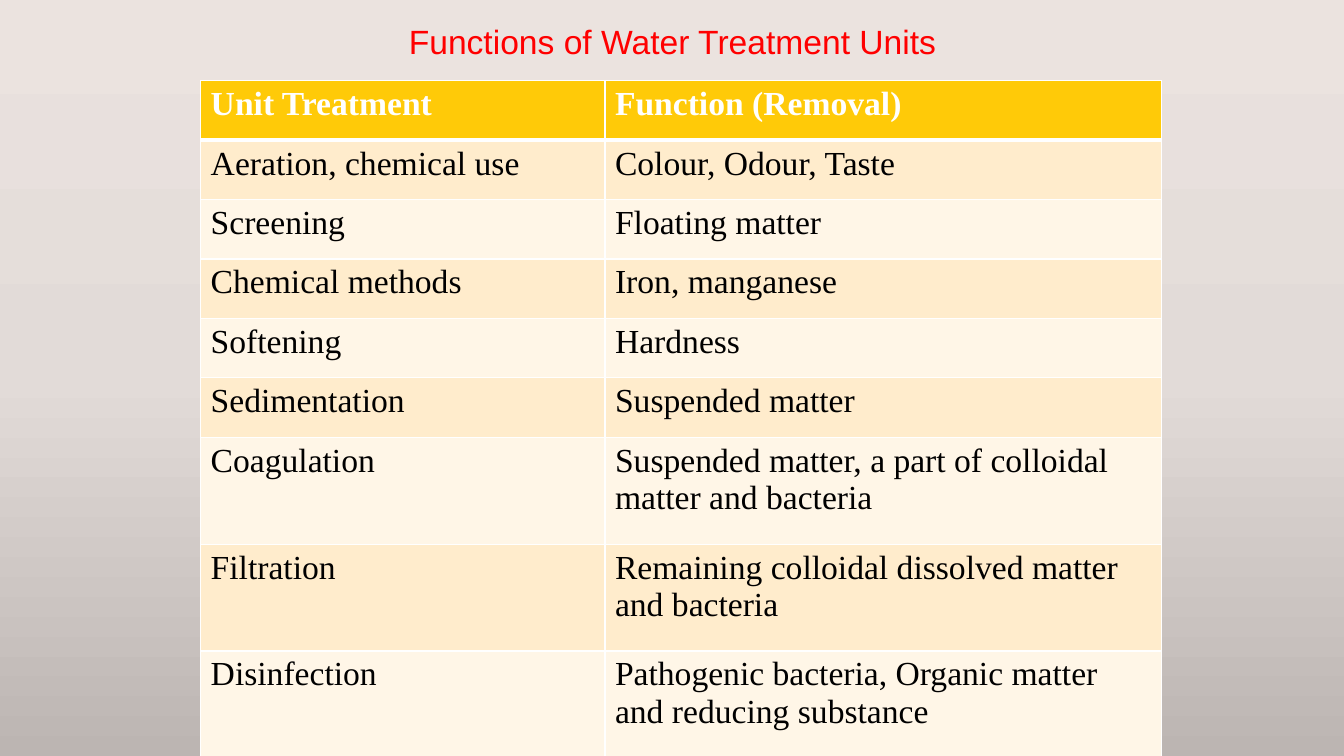
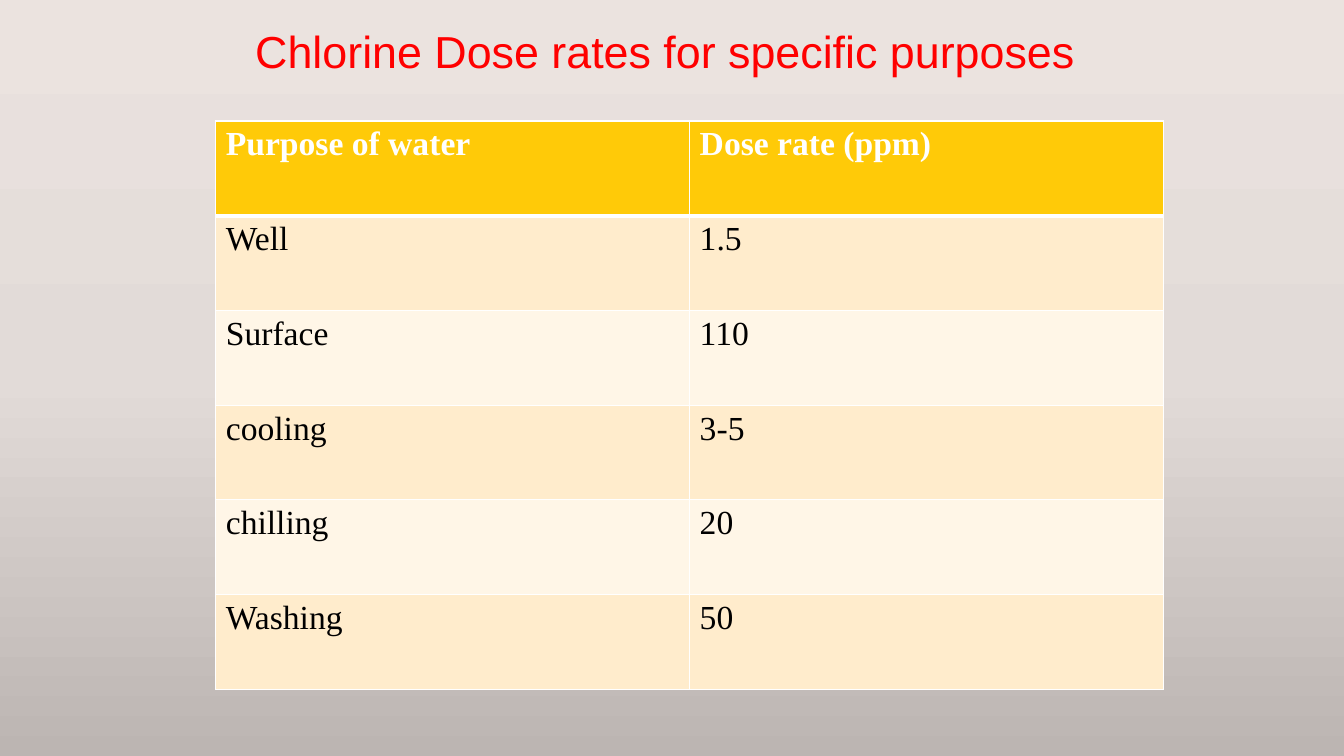
import copy
import dataclasses

import pptx
import pptx.dml.color
import pptx.enum.text
import pptx.oxml
import pptx.oxml.ns
import pptx.util

Inches = pptx.util.Inches


@dataclasses.dataclass(frozen=True)
class Theme:
    back: tuple = ("EBE3DF", "E2DBD8", "BCB5B2")
    title: str = "FF0000"
    head: str = "FFCA08"
    bands: tuple = ("FFECCC", "FFF6E7")
    light: str = "FFFFFF"
    dark: str = "000000"
    sans: str = "Arial"
    serif: str = "Times New Roman"
    body: int = 24
    rule: int = 1
    thick: int = 3


THEME = Theme()
WIDE, HIGH = 13.33, 7.5
SHORT, TALL = 0.59, 1.06

SLIDES = [
    {
        "title": "Functions of Water Treatment Units",
        "size": 24,
        "box": (1.67, 0, 10, 0.66),
        "at": (1.99, 0.8),
        "cols": (4.01, 5.52),
        "rows": [SHORT] * 6 + [TALL] * 3,
        "cells": [
            ("Unit Treatment", "Function (Removal)"),
            ("Aeration, chemical use", "Colour, Odour, Taste"),
            ("Screening", "Floating matter"),
            ("Chemical methods", "Iron, manganese"),
            ("Softening", "Hardness"),
            ("Sedimentation", "Suspended matter"),
            ("Coagulation", "Suspended matter, a part of colloidal matter and bacteria"),
            ("Filtration", "Remaining colloidal dissolved matter and bacteria"),
            ("Disinfection", "Pathogenic bacteria, Organic matter and reducing substance"),
        ],
    },
    {
        "title": "Chlorine Dose rates for specific purposes",
        "size": 32,
        "box": (1.6, 0, 10, 0.83),
        "at": (2.14, 1.2),
        "cols": (4.7, 4.7),
        "rows": [0.94] * 6,
        "cells": [
            ("Purpose of water", "Dose rate (ppm)"),
            ("Well", "1.5"),
            ("Surface", "110"),
            ("cooling", "3-5"),
            ("chilling", "20"),
            ("Washing", "50"),
        ],
    },
]


def color(code):
    return pptx.dml.color.RGBColor.from_string(code)


def write(frame, text, *, font, size, ink, bold=False, align=None, line=None):
    para = frame.paragraphs[0]
    para.alignment, para.line_spacing = align, line
    run = para.add_run()
    run.text = text
    run.font.name, run.font.size, run.font.bold = font, pptx.util.Pt(size), bold
    run.font.color.rgb = color(ink)


def paint_back(master):
    fill = master.background.fill
    fill.gradient()
    fill.gradient_angle = 270
    stops = master.element.find(".//" + pptx.oxml.ns.qn("a:gsLst"))
    stops.insert(1, copy.deepcopy(stops[0]))
    for stop, code, place in zip(fill.gradient_stops, THEME.back, (0, 0.5, 1)):
        stop.color.rgb = color(code)
        stop.position = place


def edge(cell, top, bottom):
    """Rule all four sides of a cell; the widths of top and bottom are points."""
    props = cell._tc.get_or_add_tcPr()
    sides = {"L": THEME.rule, "R": THEME.rule, "T": top, "B": bottom}
    for spot, (side, width) in enumerate(sides.items()):
        props.insert(spot, pptx.oxml.parse_xml(
            f'<a:ln{side} {pptx.oxml.ns.nsdecls("a")} w="{pptx.util.Pt(width)}">'
            f'<a:solidFill><a:srgbClr val="{THEME.light}"/></a:solidFill>'
            f'</a:ln{side}>'))


def add_title(slide, data):
    frame = slide.shapes.add_textbox(*map(Inches, data["box"])).text_frame
    frame.word_wrap = True
    frame.vertical_anchor = pptx.enum.text.MSO_ANCHOR.BOTTOM
    write(frame, data["title"], font=THEME.sans, size=data["size"],
          ink=THEME.title, align=pptx.enum.text.PP_ALIGN.CENTER, line=0.9)


def add_grid(slide, data):
    cols, rows = data["cols"], data["rows"]
    span = (*data["at"], sum(cols), sum(rows))
    grid = slide.shapes.add_table(len(rows), len(cols), *map(Inches, span)).table
    for col, width in zip(grid.columns, cols):
        col.width = Inches(width)
    for r, (height, texts) in enumerate(zip(rows, data["cells"])):
        grid.rows[r].height = Inches(height)
        head = r == 0
        shade = THEME.head if head else THEME.bands[(r - 1) % 2]
        for c, text in enumerate(texts):
            cell = grid.cell(r, c)
            cell.fill.solid()
            cell.fill.fore_color.rgb = color(shade)
            edge(cell, top=THEME.thick if r == 1 else THEME.rule,
                 bottom=THEME.thick if head else THEME.rule)
            write(cell.text_frame, text, font=THEME.serif, size=THEME.body,
                  ink=THEME.light if head else THEME.dark, bold=head)


def main():
    deck = pptx.Presentation()
    deck.slide_width, deck.slide_height = Inches(WIDE), Inches(HIGH)
    paint_back(deck.slide_master)
    for data in SLIDES:
        slide = deck.slides.add_slide(deck.slide_layouts[6])
        add_title(slide, data)
        add_grid(slide, data)
    deck.save("out.pptx")


if __name__ == "__main__":
    main()
